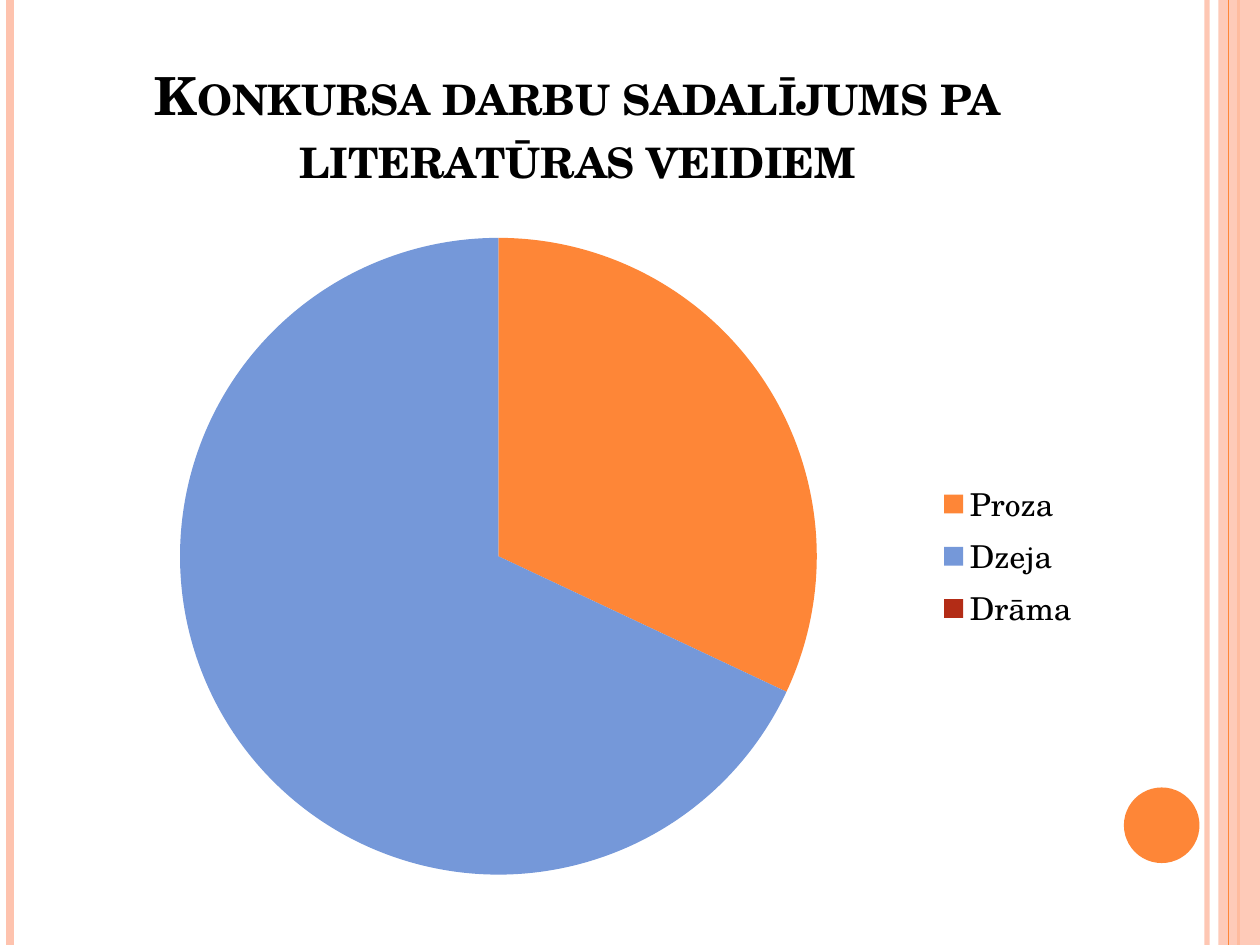
from lxml import etree
from pptx import Presentation
from pptx.chart.data import CategoryChartData
from pptx.dml.color import RGBColor
from pptx.enum.chart import XL_CHART_TYPE, XL_LEGEND_POSITION
from pptx.enum.shapes import MSO_CONNECTOR, MSO_SHAPE
from pptx.enum.text import MSO_ANCHOR, PP_ALIGN
from pptx.oxml.ns import qn
from pptx.util import Inches, Pt

PIE = XL_CHART_TYPE.PIE
RIGHT = XL_LEGEND_POSITION.RIGHT
LINE = MSO_CONNECTOR.STRAIGHT
RECT, OVAL = MSO_SHAPE.RECTANGLE, MSO_SHAPE.OVAL
BOTTOM, CENTER = MSO_ANCHOR.BOTTOM, PP_ALIGN.CENTER

BLACK = RGBColor(0x00, 0x00, 0x00)
ORANGE = RGBColor(0xFE, 0x86, 0x37)
PEACH = RGBColor(0xFE, 0xC3, 0xAE)
BLUE = RGBColor(0x75, 0x98, 0xD9)
RED = RGBColor(0xB3, 0x2C, 0x16)
FONT = "TeX Gyre Schola"

prs = Presentation()
prs.slide_width, prs.slide_height = Inches(10), Inches(7.5)
slide = prs.slides.add_slide(prs.slide_layouts[5])
shapes = slide.shapes


def fade(fill, percent):
    color = fill._xPr.find(".//" + qn("a:srgbClr"))
    etree.SubElement(color, qn("a:alpha"), val=str(percent * 1000))


def add_rule(x, color, width):
    rule = shapes.add_connector(LINE, Inches(x), 0, Inches(x), Inches(7.5))
    rule.line.color.rgb = color
    rule.line.width = Pt(width)
    etree.SubElement(rule._element.spPr, qn("a:effectLst"))
    return rule


# Edge rules, side band and corner dot
fade(add_rule(9.58, PEACH, 3).line.fill, 93)
add_rule(0.08, PEACH, 4.5)
add_rule(9.83, ORANGE, 1.5)
band = shapes.add_shape(RECT, Inches(9.67), 0, Inches(0.33), Inches(7.5))
add_rule(9.75, ORANGE, 0.75)
dot = shapes.add_shape(OVAL, Inches(8.92), Inches(6.25), Inches(0.6), Inches(0.6))
for shape, color in ((band, PEACH), (dot, ORANGE)):
    shape.shadow.inherit = False
    shape.fill.solid()
    shape.fill.fore_color.rgb = color
    shape.line.fill.background()
fade(band.fill, 87)

# Title
title = shapes.title
title.left, title.top = Inches(0.5), Inches(0.3)
title.width, title.height = Inches(8.17), Inches(1.25)
frame = title.text_frame
frame.word_wrap = True
frame.vertical_anchor = BOTTOM
para = frame.paragraphs[0]
para.alignment = CENTER
run = para.add_run()
run.text = "Konkursa darbu sadalījums pa literatūras veidiem"
run.font.name, run.font.size, run.font.bold = FONT, Pt(30), True
run.font.color.rgb = BLACK
run.font._element.set("cap", "small")

# Pie chart
data = CategoryChartData()
data.categories = ["Proza", "Dzeja", "Drāma"]
data.add_series("Series 1", (32, 68, 0))
chart = shapes.add_chart(PIE, Inches(0.5), Inches(1.75), Inches(8.17),
                         Inches(5.33), data).chart
chart.has_title = False
chart.font.name, chart.font.size = FONT, Pt(18)
chart.font.color.rgb = BLACK
chart.has_legend = True
chart.legend.position = RIGHT
chart.legend.include_in_layout = False
plot = chart.plots[0]
plot.vary_by_categories = True
for i, color in enumerate((ORANGE, BLUE, RED)):
    slice_fill = plot.series[0].points[i].format.fill
    slice_fill.solid()
    slice_fill.fore_color.rgb = color

prs.save("out.pptx")
